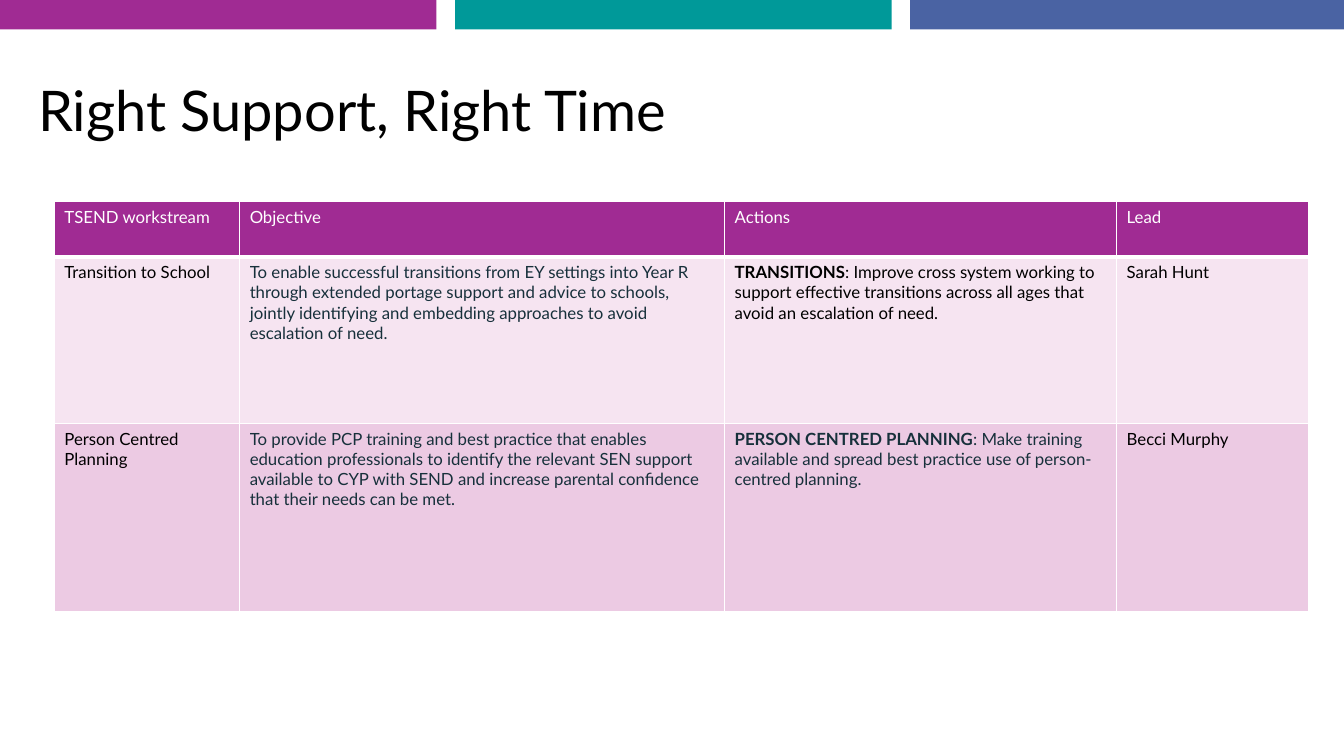
from dataclasses import dataclass

from lxml import etree
from pptx import Presentation
from pptx.dml.color import RGBColor
from pptx.enum import shapes, text
from pptx.oxml import ns
from pptx.util import Cm, Pt

FONT = "Lato"
PURPLE, TEAL, BLUE = "A02B93", "009999", "4A63A3"
WHITE, BLACK, SLATE = "FFFFFF", "000000", "17303B"
BAR_WIDTH, BAR_HEIGHT, BAR_PITCH = 11, 0.74, 11.47
COL_WIDTHS = (4.67, 12.22, 9.88, 4.85)
ROW_HEIGHTS = (1.4, 4.19, 4.75)


@dataclass
class Entry:
    body: str
    color: str = BLACK
    lead: str = ""


@dataclass
class Row:
    fill: str
    entries: list[Entry]
    bottom: float = 1


ROWS = [
    Row(PURPLE, [Entry(h, WHITE) for h in
                 ("TSEND workstream", "Objective", "Actions", "Lead")], bottom=3),
    Row("F6E4F1", [
        Entry("Transition to School"),
        Entry("To enable successful transitions from EY settings into Year R through "
              "extended portage support and advice to schools, jointly identifying and "
              "embedding approaches to avoid escalation of need.", SLATE),
        Entry(": Improve cross system working to support effective transitions across "
              "all ages that avoid an escalation of need.", lead="TRANSITIONS"),
        Entry("Sarah Hunt"),
    ]),
    Row("ECCAE3", [
        Entry("Person Centred Planning"),
        Entry("To provide PCP training and best practice that enables education "
              "professionals to identify the relevant SEN support available to CYP with "
              "SEND and increase parental confidence that their needs can be met.", SLATE),
        Entry(": Make training available and spread best practice use of "
              "person-centred planning.", SLATE, lead="PERSON CENTRED PLANNING"),
        Entry("Becci Murphy"),
    ]),
]


def set_fill(fill, color: str) -> None:
    fill.solid()
    fill.fore_color.rgb = RGBColor.from_string(color)


def add_run(p, content: str, size: float, color: str, bold: bool = False) -> None:
    r = p.add_run()
    r.text = content
    r.font.name = FONT
    r.font.size = Pt(size)
    r.font.bold = bold
    set_fill(r.font.fill, color)


def add_bars(s) -> None:
    for i, color in enumerate((PURPLE, TEAL, BLUE)):
        sp = s.shapes.add_shape(shapes.MSO_SHAPE.RECTANGLE, Cm(i * BAR_PITCH), 0,
                                Cm(BAR_WIDTH), Cm(BAR_HEIGHT))
        sp.shadow.inherit = False
        set_fill(sp.fill, color)
        sp.line.fill.background()


def add_title(s, content: str) -> None:
    sp = s.shapes.title
    sp.left, sp.top, sp.width, sp.height = Cm(0.71), Cm(1.02), Cm(32.44), Cm(3.68)
    tf = sp.text_frame
    tf.auto_size = text.MSO_AUTO_SIZE.NONE
    tf.vertical_anchor = text.MSO_ANCHOR.MIDDLE
    p = tf.paragraphs[0]
    p.alignment = text.PP_ALIGN.LEFT
    p.line_spacing = 0.9
    add_run(p, content, 40, BLACK)


def add_borders(cell, bottom: float) -> None:
    tc_pr = cell._tc.get_or_add_tcPr()
    for side, width in (("L", 1), ("R", 1), ("T", 1), ("B", bottom)):
        ln = etree.SubElement(tc_pr, ns.qn(f"a:ln{side}"), w=str(Pt(width)))
        solid = etree.SubElement(ln, ns.qn("a:solidFill"))
        etree.SubElement(solid, ns.qn("a:srgbClr"), val=WHITE)


def add_workstreams(s) -> None:
    frame = s.shapes.add_table(len(ROWS), len(COL_WIDTHS), Cm(1.37), Cm(5.08),
                               Cm(sum(COL_WIDTHS)), Cm(sum(ROW_HEIGHTS)))
    table = frame.table
    for column, width in zip(table.columns, COL_WIDTHS):
        column.width = Cm(width)
    for i, (row, height) in enumerate(zip(ROWS, ROW_HEIGHTS)):
        table.rows[i].height = Cm(height)
        for j, entry in enumerate(row.entries):
            cell = table.cell(i, j)
            add_borders(cell, row.bottom)
            set_fill(cell.fill, row.fill)
            p = cell.text_frame.paragraphs[0]
            if entry.lead:
                add_run(p, entry.lead, 12, entry.color, bold=True)
            add_run(p, entry.body, 12, entry.color)


def main() -> None:
    prs = Presentation()
    prs.slide_width, prs.slide_height = Cm(33.87), Cm(19.05)
    s = prs.slides.add_slide(prs.slide_layouts.get_by_name("Title Only"))
    add_bars(s)
    add_title(s, "Right Support, Right Time")
    add_workstreams(s)
    prs.save("out.pptx")


if __name__ == "__main__":
    main()
